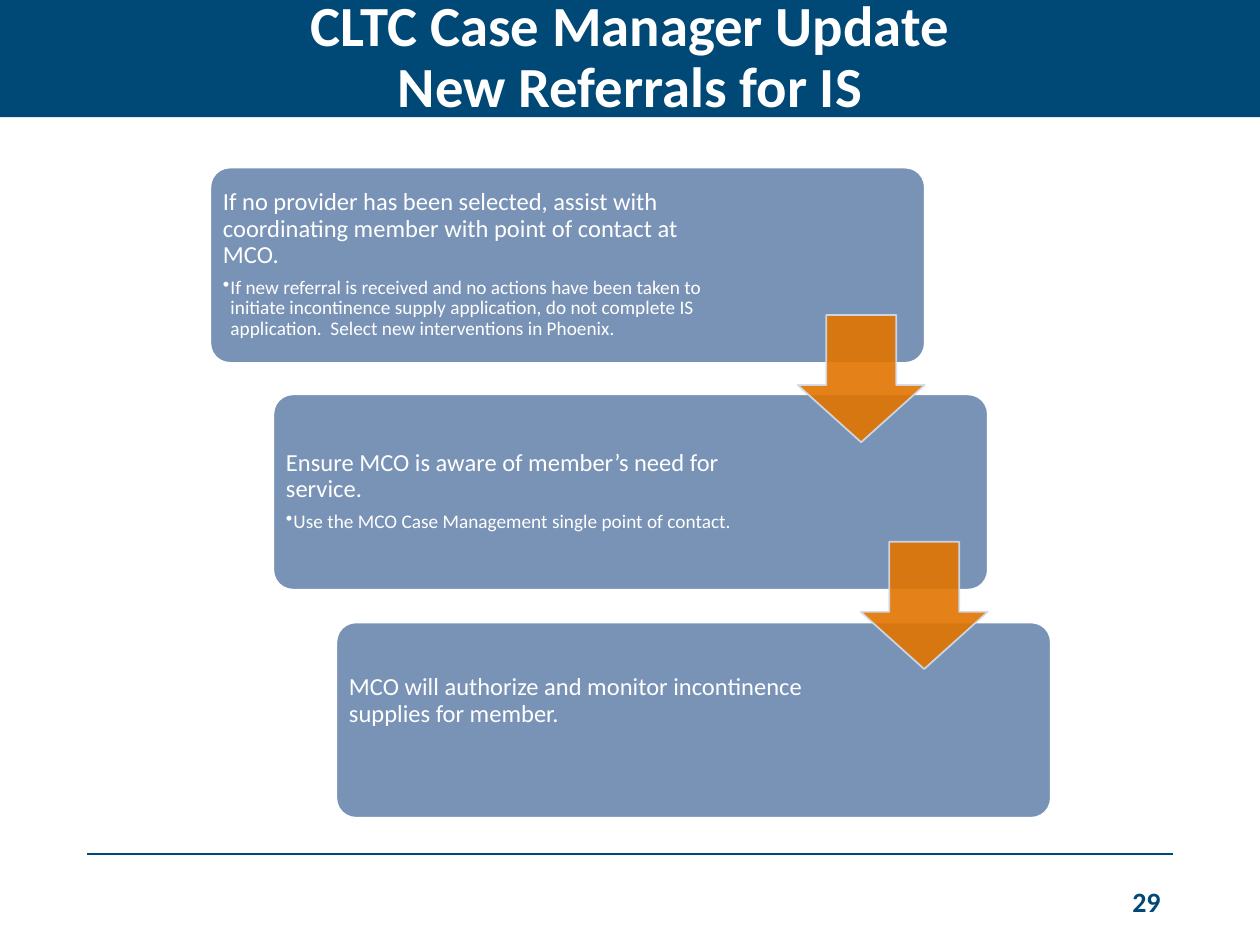
from dataclasses import dataclass

from lxml import etree
from pptx import Presentation
from pptx.dml.color import RGBColor
from pptx.enum.shapes import MSO_CONNECTOR, MSO_SHAPE
from pptx.enum.text import MSO_ANCHOR, MSO_AUTO_SIZE, PP_ALIGN
from pptx.oxml.ns import qn
from pptx.util import Emu, Pt

PX = 9144  # EMU per px, 100 px to the inch
TITLE_ONLY = 5
RECTANGLE_ROUNDED, ARROW_DOWN = MSO_SHAPE.ROUNDED_RECTANGLE, MSO_SHAPE.DOWN_ARROW
STRAIGHT = MSO_CONNECTOR.STRAIGHT
MIDDLE = MSO_ANCHOR.MIDDLE
NO_AUTOFIT = MSO_AUTO_SIZE.NONE
LEFT, CENTER, RIGHT = PP_ALIGN.LEFT, PP_ALIGN.CENTER, PP_ALIGN.RIGHT


@dataclass(frozen=True)
class Theme:
    font: str = "Calibri"
    navy: str = "004875"
    card: str = "7993B7"
    arrow: str = "E27500"
    arrow_edge: str = "D2DEEF"
    white: str = "FFFFFF"
    title_size: float = 32.4
    number_size: int = 16
    step_size: int = 14
    detail_size: int = 11


def px(value):
    return Emu(value * PX)


class SlideBuilder:
    def __init__(self, page, theme):
        self.page = page
        self.theme = theme

    def span(self, para, text, size, color, bold=False):
        span = para.add_run()
        span.text = text
        span.font.name = self.theme.font
        span.font.size = Pt(size)
        span.font.bold = bold
        span.font.color.rgb = RGBColor.from_string(color)

    def title(self, lines, width, height):
        box = self.page.shapes.title
        box.left, box.top, box.width, box.height = px(0), px(0), px(width), px(height)
        box.fill.solid()
        box.fill.fore_color.rgb = RGBColor.from_string(self.theme.navy)
        frame = box.text_frame
        frame.auto_size = NO_AUTOFIT
        frame.vertical_anchor = MIDDLE
        para = frame.paragraphs[0]
        para.alignment = CENTER
        para.line_spacing = 0.9
        for index, line in enumerate(lines):
            if index:
                para.add_line_break()
            self.span(para, line, self.theme.title_size, self.theme.white, bold=True)

    def text_box(self, left, top, width, height, inset=None):
        box = self.page.shapes.add_textbox(px(left), px(top), px(width), px(height))
        frame = box.text_frame
        frame.word_wrap = True
        frame.vertical_anchor = MIDDLE
        if inset is not None:
            frame.margin_left = frame.margin_right = px(inset)
            frame.margin_top = frame.margin_bottom = px(inset)
        return frame

    def page_number(self, number, left, top, width, height):
        para = self.text_box(left, top, width, height).paragraphs[0]
        para.alignment = RIGHT
        self.span(para, number, self.theme.number_size, self.theme.navy, bold=True)

    def rule(self, left, right, y):
        line = self.page.shapes.add_connector(STRAIGHT, px(left), px(y), px(right), px(y))
        line.line.color.rgb = RGBColor.from_string(self.theme.navy)
        line.line.width = Pt(1)
        etree.SubElement(line._element.spPr, qn("a:effectLst"))

    def shape(self, kind, left, top, width, height, fill, edge, adjustments):
        shape = self.page.shapes.add_shape(kind, px(left), px(top), px(width), px(height))
        shape.shadow.inherit = False
        shape.fill.solid()
        shape.fill.fore_color.rgb = RGBColor.from_string(fill)
        shape.line.color.rgb = RGBColor.from_string(edge)
        shape.line.width = Pt(1)
        for index, value in enumerate(adjustments):
            shape.adjustments[index] = value
        return shape

    def card(self, left, top, width, height):
        self.shape(RECTANGLE_ROUNDED, left, top, width, height,
                   self.theme.card, self.theme.white, [0.1])

    def arrow(self, left, top, size):
        shape = self.shape(ARROW_DOWN, left, top, size, size,
                           self.theme.arrow, self.theme.arrow_edge, [0.55, 0.45])
        for color in shape._element.spPr.iter(qn("a:srgbClr")):
            etree.SubElement(color, qn("a:alpha"), val="90000")

    def step_text(self, left, top, width, height, step, detail):
        frame = self.text_box(left, top, width, height, inset=6)
        para = frame.paragraphs[0]
        self.step_paragraph(para, step, self.theme.step_size, 0.35)
        if detail:
            para = frame.add_paragraph()
            para.level = 1
            properties = para._p.get_or_add_pPr()
            properties.set("marL", str(px(6)))
            properties.set("indent", str(px(-6)))
            etree.SubElement(properties, qn("a:buChar"), char="•")
            self.step_paragraph(para, detail, self.theme.detail_size, 0.15)

    def step_paragraph(self, para, text, size, gap):
        para.alignment = LEFT
        para.line_spacing = 0.9
        para.space_after = Pt(round(size * gap, 1))
        self.span(para, text, size, self.theme.white)


# Each step: text, bullet, text width, text height
STEPS = [
    ("If no provider has been selected, assist with coordinating member "
     "with point of contact at MCO.",
     "If new referral is received and no actions have been taken to initiate "
     "incontinence supply application, do not complete IS application.  "
     "Select new interventions in Phoenix.", 400, 146),
    ("Ensure MCO is aware of member’s need for service.",
     "Use the MCO Case Management single point of contact.", 407, 146),
    ("MCO will authorize and monitor incontinence supplies for member.",
     None, 407, 117),
]
CARD_LEFT, CARD_TOP, CARD_WIDTH, CARD_HEIGHT = 167, 133, 567, 155
STEP_RIGHT, STEP_DOWN = 50, 180.5
ARROW_SIZE, ARROW_TOP = 101, 250


def main():
    deck = Presentation()
    deck.slide_width, deck.slide_height = px(1000), px(750)
    page = deck.slides.add_slide(deck.slide_layouts[TITLE_ONLY])
    builder = SlideBuilder(page, Theme())

    # Header and footer
    builder.title(["CLTC Case Manager Update", "New Referrals for IS"], 1000, 93)
    builder.rule(69, 931, 678)
    builder.page_number("29", 706, 695, 225, 40)

    # Staggered step cards
    for index, (step, detail, width, height) in enumerate(STEPS):
        left = CARD_LEFT + index * STEP_RIGHT
        top = CARD_TOP + round(index * STEP_DOWN)
        builder.card(left, top, CARD_WIDTH, CARD_HEIGHT)
        builder.step_text(left + 4, top + 4, width, height, step, detail)

    # Arrows from each card to the next, flush with the card's right side
    for index in range(len(STEPS) - 1):
        left = CARD_LEFT + CARD_WIDTH - ARROW_SIZE + index * STEP_RIGHT
        builder.arrow(left, ARROW_TOP + round(index * STEP_DOWN), ARROW_SIZE)

    deck.save("out.pptx")


if __name__ == "__main__":
    main()
